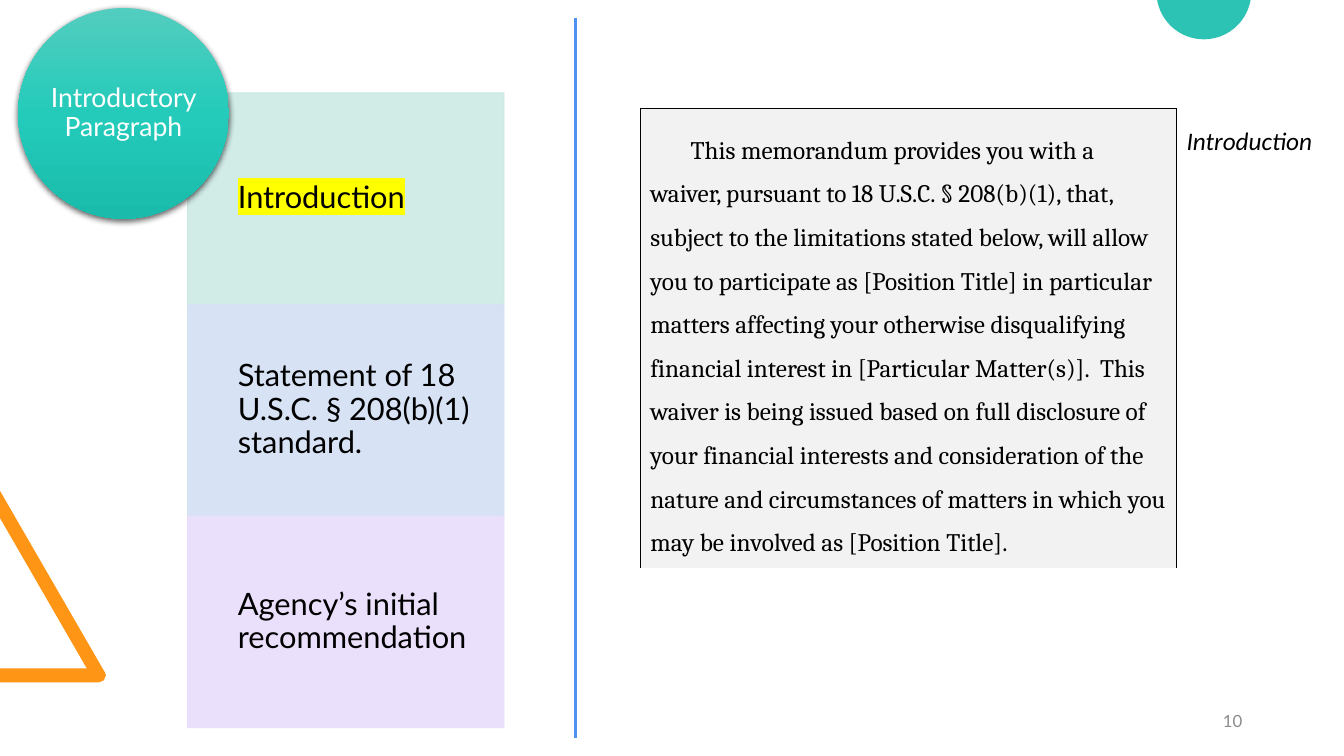
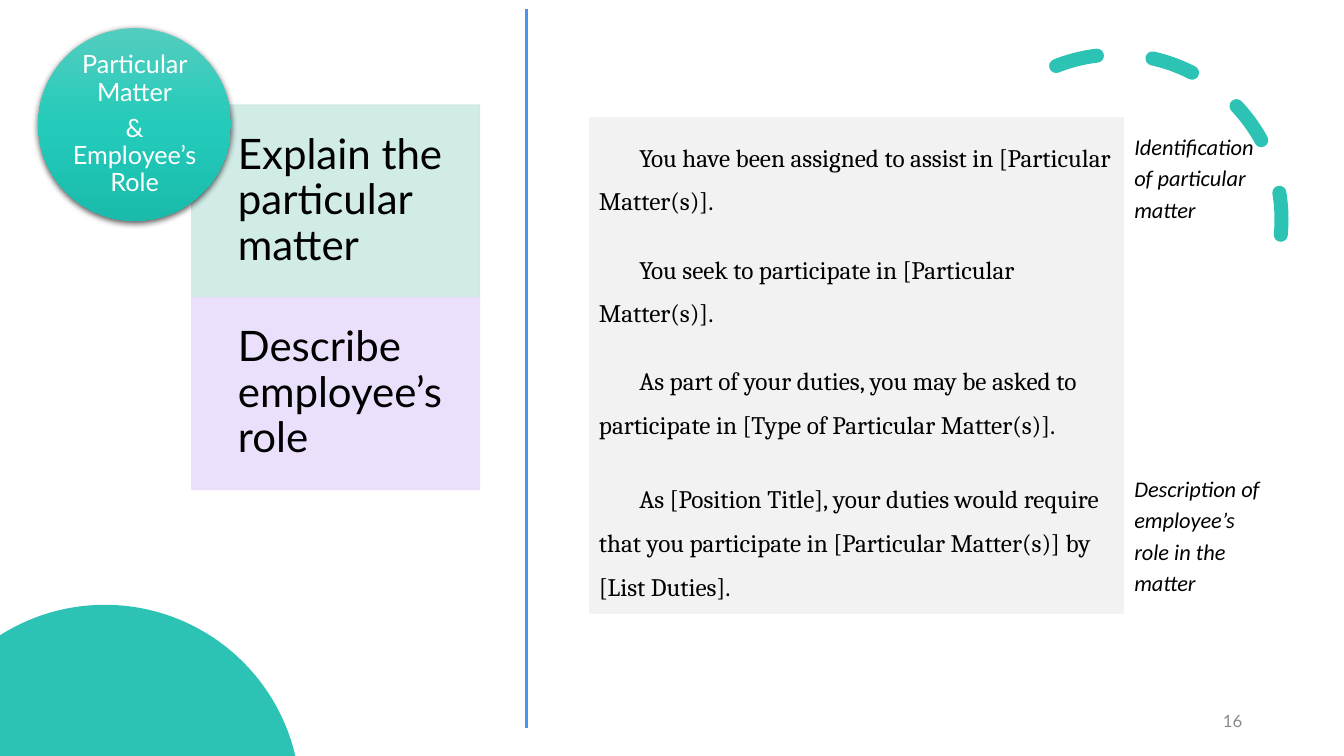
import math

from lxml import etree
from pptx import Presentation
from pptx.dml.color import RGBColor
from pptx.enum.dml import MSO_LINE
from pptx.enum.shapes import MSO_CONNECTOR, MSO_SHAPE
from pptx.enum.text import MSO_ANCHOR, MSO_AUTO_SIZE, PP_ALIGN
from pptx.oxml import parse_xml
from pptx.oxml.ns import nsdecls, qn
from pptx.util import Inches, Pt

RECT, OVAL, ARC = MSO_SHAPE.RECTANGLE, MSO_SHAPE.OVAL, MSO_SHAPE.ARC
STRAIGHT = MSO_CONNECTOR.STRAIGHT
DASH = MSO_LINE.DASH
MIDDLE, TOP = MSO_ANCHOR.MIDDLE, MSO_ANCHOR.TOP
LEFT, CENTER, RIGHT = PP_ALIGN.LEFT, PP_ALIGN.CENTER, PP_ALIGN.RIGHT
NO_FIT = MSO_AUTO_SIZE.NONE

COLORS = {
    "teal": "2CC3B4", "orange": "FF9514", "blue": "4E91F0",
    "mint": "CDE9E5", "sky": "D3E1F5", "lilac": "E9DDFC",
    "paper": "F2F2F2", "black": "000000", "white": "FFFFFF",
    "grey": "8C8C8C", "yellow": "FFFF00",
    "badge_top": "53CDBF", "badge_mid": "24CBBA", "badge_low": "1ABBAB",
}
HEAD_FONT, BODY_FONT, NOTE_FONT = "Lato", "Cambria", "Calibri"
NO_GRID_STYLE = "{2D5ABB26-0587-4C30-8999-92F81FD0307C}"


def rgb(name):
    return RGBColor.from_string(COLORS[name])


def box(*lengths):
    return [Inches(v) for v in lengths]


# Text helpers
def set_frame(tf, insets, anchor=MIDDLE):
    tf.word_wrap = True
    tf.auto_size = NO_FIT
    tf.vertical_anchor = anchor
    tf.margin_left, tf.margin_top, tf.margin_right, tf.margin_bottom = box(*insets)


def style(p, font, size, color="black", align=LEFT, spacing=1.0, after=0, italic=False):
    p.alignment = align
    p.line_spacing = spacing
    p.space_before, p.space_after = Pt(0), Pt(after)
    for r in p.runs:
        r.font.name, r.font.size = font, Pt(size)
        r.font.bold, r.font.italic = False, italic
        r.font.color.rgb = rgb(color)


def highlight(r, color):
    mark = parse_xml(f'<a:highlight {nsdecls("a")}><a:srgbClr val="{COLORS[color]}"/></a:highlight>')
    r.font.fill  # the mark follows the text fill
    r.font.color.rgb = rgb("black")
    r._r.get_or_add_rPr().find(qn("a:solidFill")).addnext(mark)


# Decorations
def outline(s, points, color):
    (x, y), *rest = [box(*pt) for pt in points]
    builder = s.shapes.build_freeform(x, y, scale=1.0)
    builder.add_line_segments(rest, close=True)
    sp = builder.convert_to_shape()
    sp.shadow.inherit = False
    sp.fill.solid()
    sp.fill.fore_color.rgb = rgb(color)
    sp.line.fill.background()


def arc_points(cx, cy, radius, start, end, steps=48):
    angles = [math.radians(start + (end - start) * i / steps) for i in range(steps + 1)]
    return [(cx + radius * math.cos(a), cy + radius * math.sin(a)) for a in angles]


def triangle_and_drop(s):
    outline(s, [(0, 4.87), (1.04, 6.67), (1.05, 6.7), (1.03, 6.75), (0.98, 6.77),
                (0, 6.77), (0, 6.63), (0.86, 6.63), (0, 5.14)], "orange")
    outline(s, arc_points(11.94, -0.08, 0.47, 9.8, 170.2), "teal")


def dashes_and_hill(s):
    arc = s.shapes.add_shape(ARC, *box(9.44, 0.54, 3.27, 3.27))
    arc.shadow.inherit = False
    arc.adjustments[0], arc.adjustments[1] = 144.42, 0
    arc.rotation = 66.1
    arc.element.spPr.find(qn("a:xfrm")).set("flipH", "1")
    arc.fill.background()
    arc.line.color.rgb = rgb("teal")
    arc.line.width = Pt(10)
    arc.line.dash_style = DASH
    arc.element.spPr.find(qn("a:ln")).set("cap", "rnd")
    outline(s, arc_points(1.04, 7.94, 1.94, -13.1, -122.4) + [(0, 7.5)], "teal")


def divider(s, x, top, bottom):
    line = s.shapes.add_connector(STRAIGHT, *box(x, top, x, bottom))
    line.line.color.rgb = rgb("blue")
    line.line.width = Pt(2.25)
    etree.SubElement(line.element.spPr, qn("a:effectLst"))


def page_number(s, number):
    tf = s.shapes.add_textbox(*box(9.42, 6.95, 3, 0.4)).text_frame
    set_frame(tf, (0.1, 0.05, 0.1, 0.05))
    tf.text = str(number)
    style(tf.paragraphs[0], HEAD_FONT, 12, "grey", RIGHT)


# Left side: stacked panels and the round title
def panels(s, left, top, width, height, items, size, indent, pad):
    for i, (text, color, marked) in enumerate(items):
        sp = s.shapes.add_shape(RECT, *box(left, top + i * height, width, height))
        sp.shadow.inherit = False
        sp.fill.solid()
        sp.fill.fore_color.rgb = rgb(color)
        sp.line.color.rgb = rgb(color)
        sp.line.width = Pt(0.5)
        for clr in sp.element.spPr.iter(qn("a:srgbClr")):
            etree.SubElement(clr, qn("a:alpha")).set("val", "90000")
        tf = sp.text_frame
        set_frame(tf, (indent, pad, pad, pad))
        tf.text = text
        style(tf.paragraphs[0], HEAD_FONT, size, spacing=0.9)
        if marked:
            highlight(tf.paragraphs[0].runs[0], "yellow")


def round_title(s, left, top, side, lines, size):
    sp = s.shapes.add_shape(OVAL, *box(left, top, side, side))
    sp.line.fill.background()
    stops = "".join(
        f'<a:gs pos="{pos}"><a:srgbClr val="{COLORS[name]}"/></a:gs>'
        for pos, name in ((0, "badge_top"), (50000, "badge_mid"), (100000, "badge_low")))
    sp.element.spPr.find(qn("a:prstGeom")).addnext(parse_xml(
        f'<a:gradFill {nsdecls("a")} rotWithShape="1"><a:gsLst>{stops}</a:gsLst>'
        '<a:lin ang="5400000" scaled="0"/></a:gradFill>'))
    sp.shadow.inherit = False
    sp.element.spPr.find(qn("a:effectLst")).append(parse_xml(
        f'<a:outerShdw {nsdecls("a")} blurRad="{Pt(4.5)}" dist="{Pt(1.5)}" dir="5400000">'
        f'<a:srgbClr val="{COLORS["black"]}"><a:alpha val="63000"/></a:srgbClr></a:outerShdw>'))

    title = s.shapes.title
    gap = side * 0.146
    title.left, title.top, title.width, title.height = box(
        left + gap, top + gap, side - 2 * gap, side - 2 * gap)
    sp.element.addnext(title.element)
    tf = title.text_frame
    set_frame(tf, (0, 0, 0, 0))
    tf.text = "\n".join(lines)
    for p in tf.paragraphs:
        style(p, HEAD_FONT, size, "white", CENTER, 0.9, size * 0.35)


# Right side: sample wording with margin notes
def border(cell, sides):
    tc_pr = cell._tc.get_or_add_tcPr()
    for i, side in enumerate(sides):
        tc_pr.insert(i, parse_xml(
            f'<a:ln{side} {nsdecls("a")} w="{Pt(1)}"><a:solidFill>'
            f'<a:srgbClr val="{COLORS["black"]}"/></a:solidFill></a:ln{side}>'))


def fill_cell(cell, text, insets, **look):
    set_cell = cell.text_frame
    cell.margin_left, cell.margin_top, cell.margin_right, cell.margin_bottom = box(*insets)
    cell.vertical_anchor = TOP
    set_cell.text = text
    style(set_cell.paragraphs[0], **look)


def sample_table(s, left, top, widths, rows, notes, note_size, framed=False):
    """rows: (text, height); notes: (first row, last row, text)."""
    heights = [height for _, height in rows]
    frame = s.shapes.add_table(len(rows), 2, *box(left, top, sum(widths), sum(heights)))
    frame.element.find(".//" + qn("a:tableStyleId")).text = NO_GRID_STYLE
    table = frame.table
    table.first_row = table.horz_banding = False
    for col, width in zip(table.columns, widths):
        col.width = Inches(width)
    for i, (text, height) in enumerate(rows):
        table.rows[i].height = Inches(height)
        cell = table.cell(i, 0)
        fill_cell(cell, text, (0.1, 0.13, 0.1, 0.1), font=BODY_FONT, size=18, spacing=1.5)
        p_pr = cell.text_frame.paragraphs[0]._p.get_or_add_pPr()
        p_pr.set("marL", "0")
        p_pr.set("indent", str(Inches(0.4)))
        cell.fill.solid()
        cell.fill.fore_color.rgb = rgb("paper")
        if framed:
            border(cell, "LRT")
        table.cell(i, 1).fill.background()
    for first, last, text in notes:
        cell = table.cell(first, 1)
        if last > first:
            cell.merge(table.cell(last, 1))
        fill_cell(cell, text, (0.1, 0.13, 0, 0.1), font=NOTE_FONT, size=note_size,
                  spacing=1.15, italic=True)


# Slides
def introduction_slide(prs):
    s = prs.slides.add_slide(prs.slide_layouts[5])
    triangle_and_drop(s)
    panels(s, 1.86, 0.92, 3.14, 2.1, [
        ("Introduction", "mint", True),
        ("Statement of 18 U.S.C. § 208(b)(1) standard.", "sky", False),
        ("Agency’s initial recommendation", "lilac", False),
    ], size=22, indent=0.5, pad=0.17)
    round_title(s, 0.18, 0.08, 2.09, ["Introductory Paragraph"], 19)
    page_number(s, 10)
    sample_table(s, 6.35, 1.08, (5.32, 1.49), [
        ("This memorandum provides you with a waiver, pursuant to 18 U.S.C. § 208(b)(1), "
         "that, subject to the limitations stated below, will allow you to participate as "
         "[Position Title] in particular matters affecting your otherwise disqualifying "
         "financial interest in [Particular Matter(s)].  This waiver is being issued based "
         "on full disclosure of your financial interests and consideration of the nature "
         "and circumstances of matters in which you may be involved as [Position Title].",
         4.56),
    ], [(0, 0, "Introduction")], note_size=18, framed=True)
    divider(s, 5.71, 0.18, 7.32)


def matter_slide(prs):
    s = prs.slides.add_slide(prs.slide_layouts[5])
    dashes_and_hill(s)
    page_number(s, 16)
    panels(s, 1.9, 1.04, 2.86, 1.91, [
        ("Explain the particular matter", "mint", False),
        ("Describe employee’s role", "lilac", False),
    ], size=30, indent=0.46, pad=0.23)
    round_title(s, 0.38, 0.28, 1.91, ["Particular Matter", "& Employee’s Role"], 18)
    sample_table(s, 5.84, 1.16, (5.31, 1.44), [
        ("You have been assigned to assist in [Particular Matter(s)].", 1.11),
        ("You seek to participate in [Particular Matter(s)].", 1.11),
        ("As part of your duties, you may be asked to participate in "
         "[Type of Particular Matter(s)].", 1.17),
        ("As [Position Title], your duties would require that you participate in "
         "[Particular Matter(s)] by [List Duties].", 1.54),
    ], [(0, 2, "Identification of particular matter"),
        (3, 3, "Description of employee’s role in the matter")], note_size=16)
    divider(s, 5.22, 0.09, 7.22)


def main():
    prs = Presentation()
    prs.slide_width, prs.slide_height = box(13.33, 7.5)
    introduction_slide(prs)
    matter_slide(prs)
    prs.save("out.pptx")


if __name__ == "__main__":
    main()
